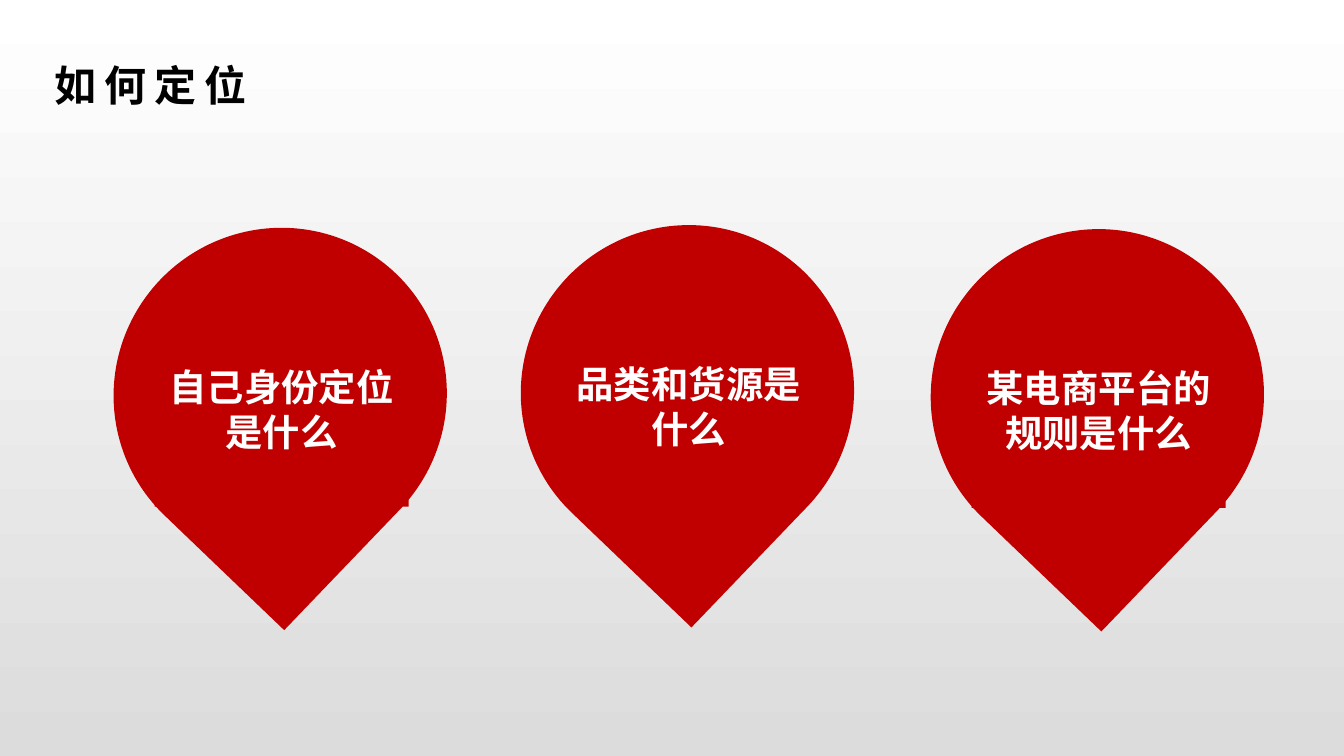
import pptx
import pptx.util
import pptx.dml.color
import pptx.enum.shapes
import pptx.enum.text
import pptx.oxml.ns
from lxml import etree

Inches = pptx.util.Inches
Pt = pptx.util.Pt
FONT = "Noto Sans CJK SC"
COLORS = {"red": "C00000", "white": "FFFFFF", "black": "000000", "grey": "DCDCDC"}

# left, top, label height, label
PINS = [
    (0.84, 1.70, 1.11, "自己身份定位是什么"),
    (3.87, 1.68, 0.77, "品类和货源是什么"),
    (6.92, 1.71, 1.11, "某电商平台的规则是什么"),
]


def rgb(name):
    return pptx.dml.color.RGBColor.from_string(COLORS[name])


def paint_back(slide):
    fill = slide.background.fill
    fill.gradient()
    fill.gradient_angle = 270
    for stop, name in zip(fill.gradient_stops, ("white", "grey")):
        stop.color.rgb = rgb(name)


def write(frame, text, size, color, align, line, space=None):
    """Fill a text frame with one bold run; line and space are in points."""
    frame.word_wrap = True
    frame.vertical_anchor = pptx.enum.text.MSO_ANCHOR.TOP
    para = frame.paragraphs[0]
    para.alignment = align
    para.line_spacing = Pt(line)
    run = para.add_run()
    run.text = text
    font = run.font
    font.name, font.size, font.bold = FONT, Pt(size), True
    font.color.rgb = rgb(color)
    props = run._r.get_or_add_rPr()
    etree.SubElement(props, pptx.oxml.ns.qn("a:ea")).set("typeface", FONT)
    if space:
        props.set("spc", str(round(space * 100)))


def add_red(group, kind, left, top, width, height, turn=0):
    shape = group.shapes.add_shape(
        kind, Inches(left), Inches(top), Inches(width), Inches(height))
    shape.rotation = turn
    shape.shadow.inherit = False
    shape.fill.solid()
    shape.fill.fore_color.rgb = rgb("red")
    shape.line.fill.background()
    return shape


def add_pin(slide, left, top, height, text):
    """Group two nested drops, tip down, with a label on them."""
    kinds = pptx.enum.shapes.MSO_SHAPE
    group = slide.shapes.add_group_shape()
    add_red(group, kinds.TEAR, left + 0.11, top + 0.11, 2.28, 2.25, 133.8)
    add_red(group, kinds.TEAR, left, top, 2.49, 2.47, 133.8)
    label = add_red(group, kinds.RECTANGLE, left + 0.31, top + 0.96, 1.89, height)
    write(label.text_frame, text, 20, "white", pptx.enum.text.PP_ALIGN.CENTER, 24)


def add_title(slide, text):
    box = slide.shapes.add_textbox(
        Inches(0.31), Inches(0.39), Inches(5.47), Inches(0.48))
    write(box.text_frame, text, 22.5, "black",
          pptx.enum.text.PP_ALIGN.LEFT, 27, 4.1)


def main():
    deck = pptx.Presentation()
    deck.slide_width = Inches(10)
    deck.slide_height = Inches(10) * 9 // 16
    slide = deck.slides.add_slide(deck.slide_layouts[6])
    paint_back(slide)
    first, *others = PINS
    add_pin(slide, *first)
    add_title(slide, "如何定位")
    for pin in others:
        add_pin(slide, *pin)
    deck.save("out.pptx")


if __name__ == "__main__":
    main()
